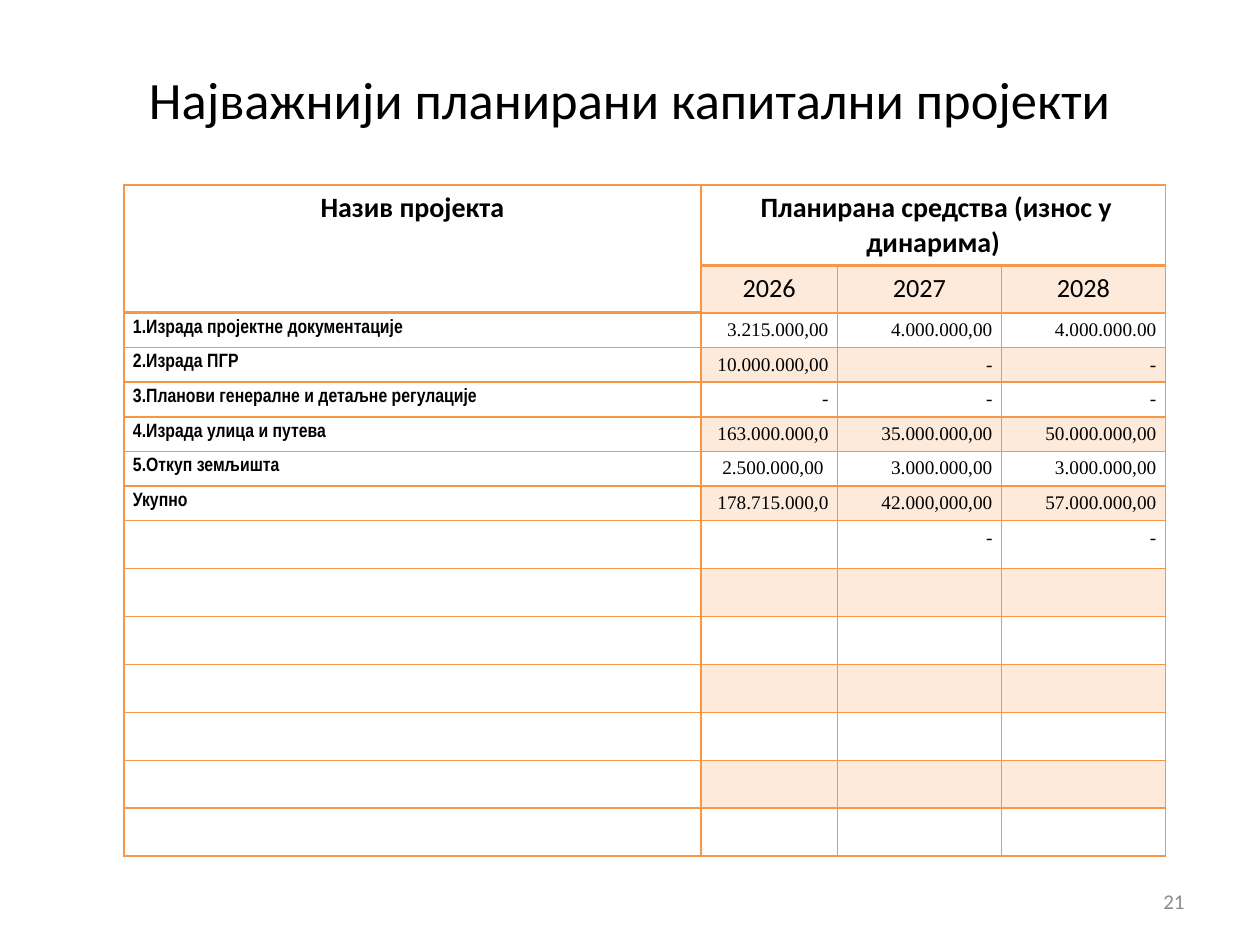
from lxml import etree
from pptx import Presentation
from pptx.dml.color import RGBColor
from pptx.enum import text
from pptx.oxml import ns
from pptx.util import Pt

ORANGE = RGBColor(0xF7, 0x96, 0x46)
BLACK = RGBColor(0, 0, 0)
GRAY = RGBColor(0x8B, 0x8B, 0x8B)

LEFT, CENTER, RIGHT = (text.PP_ALIGN.LEFT, text.PP_ALIGN.CENTER,
                       text.PP_ALIGN.RIGHT)
THIN, THICK = Pt(0.96), Pt(1.98)
COLS = [329.7, 78.1, 93.7, 93.7]
ROWS = [46.3, 26.9] + [19.8] * 6 + [27.4] * 7

YEARS = ["2026", "2027", "2028"]
PROJECTS = [
    ("1.Израда пројектне документације",
     "3.215.000,00", "4.000.000,00", "4.000.000.00"),
    ("2.Израда ПГР", "10.000.000,00", "-", "-"),
    ("3.Планови генералне и детаљне регулације", "-", "-", "-"),
    ("4.Израда улица и путева",
     "163.000.000,0", "35.000.000,00", "50.000.000,00"),
    ("5.Откуп земљишта", "2.500.000,00 ", "3.000.000,00", "3.000.000,00"),
    ("Укупно", "178.715.000,0", "42.000,000,00", "57.000.000,00"),
    ("", "", "-", "-"),
]


def write(tf, content, size, font="Calibri", color=BLACK, bold=False,
          align=LEFT):
    p = tf.paragraphs[0]
    p.alignment = align
    r = p.add_run()
    r.text = content
    r.font.size, r.font.name, r.font.bold = Pt(size), font, bold
    r.font.color.rgb = color


def add_label(s, box, content, size, color, align):
    tf = s.shapes.add_textbox(*map(Pt, box)).text_frame
    tf.word_wrap = True
    tf.vertical_anchor = text.MSO_ANCHOR.MIDDLE
    write(tf, content, size, color=color, align=align)


def set_borders(cell, top, bottom):
    tcPr = cell._tc.get_or_add_tcPr()
    sides = {"lnL": THIN, "lnR": THIN, "lnT": top, "lnB": bottom}
    for i, (tag, width) in enumerate(sides.items()):
        ln = etree.Element(ns.qn("a:" + tag), w=str(int(width)))
        fill = etree.SubElement(ln, ns.qn("a:solidFill"))
        etree.SubElement(fill, ns.qn("a:srgbClr"), val=str(ORANGE))
        tcPr.insert(i, ln)


def style_cell(cell, row, col):
    cell.margin_left = cell.margin_right = Pt(5.2)
    cell.margin_top = cell.margin_bottom = Pt(3.6)
    # Amount columns are tinted on every second row
    if col and row % 2:
        cell.fill.solid()
        cell.fill.fore_color.rgb = ORANGE
        clr = cell._tc.tcPr.find(".//" + ns.qn("a:srgbClr"))
        etree.SubElement(clr, ns.qn("a:alpha"), val="20000")
    else:
        cell.fill.background()
    # The thick rule runs under the header cells
    header_end = 0 if col else 1
    set_borders(cell, THICK if row == header_end + 1 else THIN,
                THICK if row == header_end else THIN)
    # Small end mark keeps empty rows at their height
    cell.text_frame.paragraphs[0]._p.get_or_add_endParaRPr().set("sz", "1100")


def add_projects_table(s):
    frame = s.shapes.add_table(len(ROWS), len(COLS), Pt(70.8), Pt(105.6),
                               Pt(sum(COLS)), Pt(sum(ROWS)))
    table = frame.table
    table.first_row = table.horz_banding = False
    for column, width in zip(table.columns, COLS):
        column.width = Pt(width)
    for i, height in enumerate(ROWS):
        table.rows[i].height = Pt(height)
        for j in range(len(COLS)):
            style_cell(table.cell(i, j), i, j)

    # Header
    table.cell(0, 0).merge(table.cell(1, 0))
    table.cell(0, 1).merge(table.cell(0, 3))
    headings = ["Назив пројекта", " Планирана средства (износ у динарима)"]
    for j, heading in enumerate(headings):
        write(table.cell(0, j).text_frame, heading, 16, bold=True,
              align=CENTER)
    for j, year in enumerate(YEARS, 1):
        write(table.cell(1, j).text_frame, year, 15, align=CENTER)

    # Projects and amounts
    for i, (name, *amounts) in enumerate(PROJECTS, 2):
        if name:
            write(table.cell(i, 0).text_frame, name, 11, "Arial Narrow",
                  bold=True)
        for j, amount in enumerate(amounts, 1):
            if amount:
                write(table.cell(i, j).text_frame, amount, 11,
                      "Times New Roman", align=RIGHT)


def main():
    prs = Presentation()
    prs.slide_width, prs.slide_height = Pt(720), Pt(540)
    s = prs.slides.add_slide(prs.slide_layouts[6])
    add_projects_table(s)
    # Slide number and title
    add_label(s, (516, 500.5, 168, 28.8), "21", 12, GRAY, RIGHT)
    add_label(s, (36, 21.6, 648, 69), "Најважнији планирани капитални пројекти",
              30, BLACK, CENTER)
    prs.save("out.pptx")


if __name__ == "__main__":
    main()
